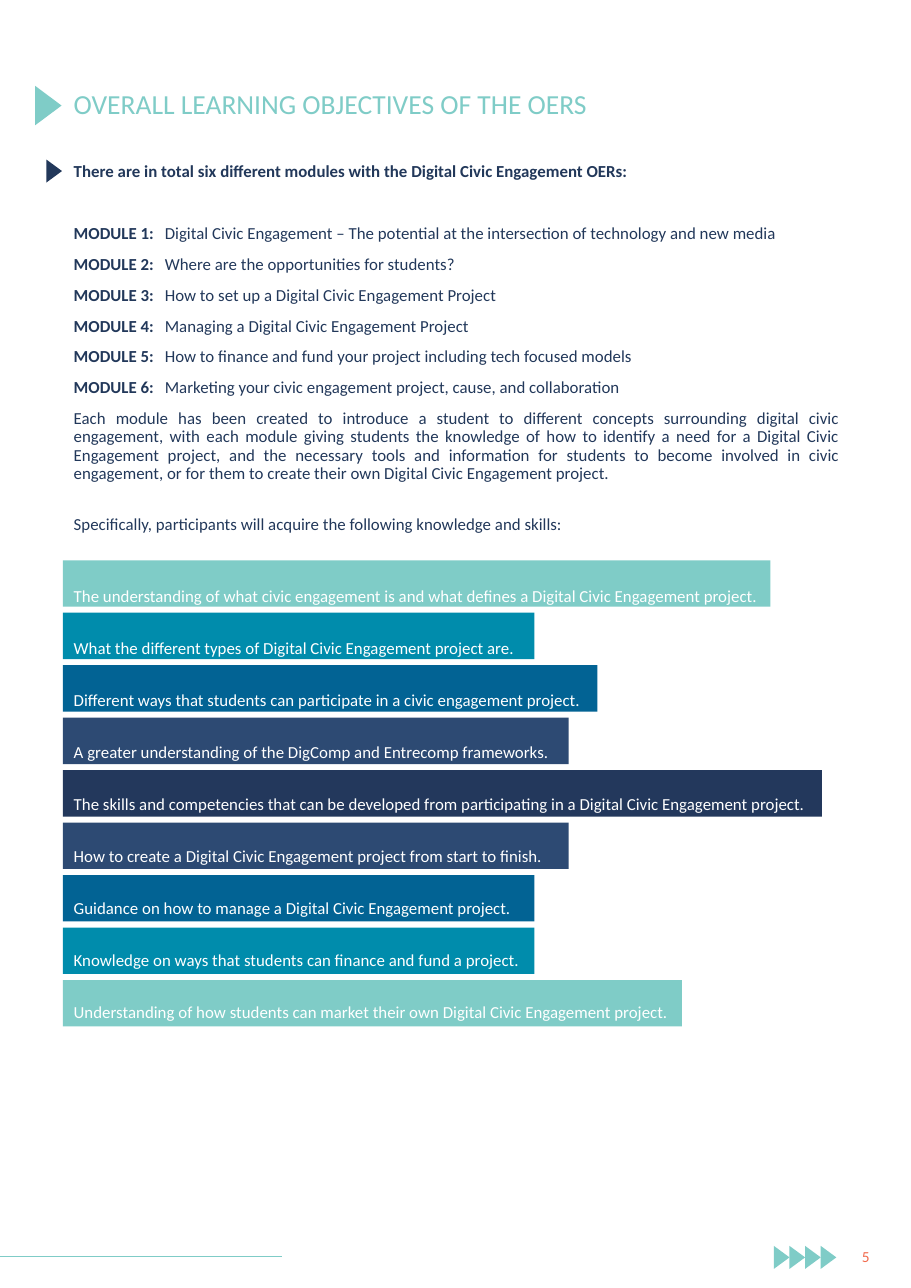
from dataclasses import dataclass, field
from typing import Any

from lxml.etree import SubElement
from pptx import Presentation
from pptx.dml.color import RGBColor
from pptx.enum.shapes import MSO_CONNECTOR as Connector, MSO_SHAPE as Shape
from pptx.enum.text import MSO_ANCHOR as Anchor, PP_ALIGN as Align
from pptx.oxml.ns import qn
from pptx.util import Cm, Pt


@dataclass(frozen=True)
class Theme:
    font: str = "Calibri"
    mint: str = "7FCCC7"
    teal: str = "008CAC"
    blue: str = "026394"
    slate: str = "2D4A73"
    navy: str = "23385C"
    ink: str = "22385A"
    coral: str = "F26B4D"
    white: str = "FFFFFF"
    title_size: float = 18
    body_size: float = 11
    page_size: float = 10


THEME = Theme()


@dataclass(frozen=True)
class Box:
    left: float
    top: float
    width: float
    height: float

    def lengths(self) -> tuple[Cm, ...]:
        return Cm(self.left), Cm(self.top), Cm(self.width), Cm(self.height)


@dataclass(frozen=True)
class Skill:
    text: str
    width: float
    color: str


@dataclass(frozen=True)
class Line:
    text: str
    lead: str = ""
    bold: bool = False
    size: float = THEME.body_size
    color: str = THEME.ink
    layout: dict[str, Any] = field(default_factory=dict)


PROSE = {"alignment": Align.JUSTIFY, "line_spacing": 0.9, "space_before": Pt(8.3)}
AFTER_GAP = PROSE | {"space_before": Pt(28.7)}
SKILLS_INTRO = PROSE | {"space_before": Pt(21.4)}
SKILL_LINE = {"alignment": Align.LEFT, "line_spacing": 2.5, "space_before": Pt(1)}
FIRST_SKILL_LINE = SKILL_LINE | {"space_before": Pt(14.1)}
HEADING = PROSE | {"alignment": Align.LEFT}

TEXT_LEFT, TEXT_WIDTH = 1.45, 18.16
MODULE_TAB = 2.1
BAR_TOP, BAR_HEIGHT, BAR_PITCH = 12.92, 1.07, 1.21
SMALL_ARROW = (0.36, 0.53)
FOOTER_ARROWS = 4

MODULES = [
    "Digital Civic Engagement – The potential at the intersection of technology and new media",
    "Where are the opportunities for students?",
    "How to set up a Digital Civic Engagement Project",
    "Managing a Digital Civic Engagement Project",
    "How to finance and fund your project including tech focused models",
    "Marketing your civic engagement project, cause, and collaboration",
]
SUMMARY = (
    "Each module has been created to introduce a student to different concepts surrounding "
    "digital civic engagement, with each module giving students the knowledge of how to "
    "identify a need for a Digital Civic Engagement project, and the necessary tools and "
    "information for students to become involved in civic engagement, or for them to create "
    "their own Digital Civic Engagement project."
)
SKILLS = [
    Skill("The understanding of what civic engagement is and what defines a "
          "Digital Civic Engagement project.", 16.31, THEME.mint),
    Skill("What the different types of Digital Civic Engagement project are.",
          10.87, THEME.teal),
    Skill("Different ways that students can participate in a civic engagement project.",
          12.32, THEME.blue),
    Skill("A greater understanding of the DigComp and Entrecomp frameworks.",
          11.66, THEME.slate),
    Skill("The skills and competencies that can be developed from participating in a "
          "Digital Civic Engagement project.", 17.5, THEME.navy),
    Skill("How to create a Digital Civic Engagement project from start to finish.",
          11.66, THEME.slate),
    Skill("Guidance on how to manage a Digital Civic Engagement project.",
          10.87, THEME.blue),
    Skill("Knowledge on ways that students can finance and fund a project.",
          10.87, THEME.teal),
    Skill("Understanding of how students can market their own "
          "Digital Civic Engagement project.", 14.27, THEME.mint),
]


def apply(target: Any, values: dict[str, Any]) -> None:
    for name, value in values.items():
        setattr(target, name, value)


def paint(shape: Any, color: str) -> None:
    shape.shadow.inherit = False
    shape.fill.solid()
    shape.fill.fore_color.rgb = RGBColor.from_string(color)
    shape.line.fill.background()


def add_bar(slide: Any, box: Box, color: str) -> None:
    paint(slide.shapes.add_shape(Shape.RECTANGLE, *box.lengths()), color)


def add_arrow(slide: Any, box: Box, color: str) -> None:
    left, top, width, height = box.lengths()
    outline = slide.shapes.build_freeform(left + width, top + height // 2)
    outline.add_line_segments([(left, top), (left, top + height)], close=True)
    paint(outline.convert_to_shape(), color)


def add_run(paragraph: Any, text: str, line: Line, bold: bool) -> None:
    run = paragraph.add_run()
    run.text = text
    apply(run.font, {"name": THEME.font, "size": Pt(line.size), "bold": bold})
    run.font.color.rgb = RGBColor.from_string(line.color)


def add_text(slide: Any, box: Box, lines: list[Line], anchor: Anchor = Anchor.TOP) -> None:
    frame = slide.shapes.add_textbox(*box.lengths()).text_frame
    apply(frame, {"word_wrap": True, "vertical_anchor": anchor})
    for index, line in enumerate(lines):
        paragraph = frame.add_paragraph() if index else frame.paragraphs[0]
        apply(paragraph, line.layout)
        if line.lead:
            tabs = SubElement(paragraph._p.get_or_add_pPr(), qn("a:tabLst"))
            SubElement(tabs, qn("a:tab"), pos=str(Cm(MODULE_TAB)), algn="l")
            add_run(paragraph, line.lead + "\t", line, True)
        add_run(paragraph, line.text, line, line.bold)


def add_footer(slide: Any) -> None:
    rule = slide.shapes.add_connector(
        Connector.STRAIGHT, Cm(0), Cm(28.98), Cm(6.5), Cm(28.98))
    rule.line.width = Pt(0.75)
    rule.line.color.rgb = RGBColor.from_string(THEME.mint)
    SubElement(rule._element.spPr, qn("a:effectLst"))
    page = Line("5", size=THEME.page_size, color=THEME.coral,
                layout={"alignment": Align.CENTER})
    add_text(slide, Box(19.46, 28.6, 0.99, 0.74), [page], Anchor.MIDDLE)
    for index in range(FOOTER_ARROWS):
        add_arrow(slide, Box(17.84 + index * SMALL_ARROW[0], 28.73, *SMALL_ARROW), THEME.mint)


def body_lines() -> list[Line]:
    lines = [Line("There are in total six different modules with the "
                  "Digital Civic Engagement OERs:", bold=True, layout=PROSE)]
    for number, module in enumerate(MODULES, start=1):
        layout = AFTER_GAP if number == 1 else PROSE
        lines.append(Line(module, lead=f"MODULE {number}:", layout=layout))
    lines.append(Line(SUMMARY, layout=PROSE))
    lines.append(Line("Specifically, participants will acquire the following "
                      "knowledge and skills:", layout=SKILLS_INTRO))
    for index, skill in enumerate(SKILLS):
        layout = SKILL_LINE if index else FIRST_SKILL_LINE
        lines.append(Line(skill.text, color=THEME.white, layout=layout))
    return lines


def main() -> None:
    deck = Presentation()
    apply(deck, {"slide_width": Cm(21), "slide_height": Cm(29.7)})
    slide = deck.slides.add_slide(deck.slide_layouts[6])

    # Footer with rule, page number and arrows
    add_footer(slide)

    # Coloured bars behind the skills
    for index, skill in enumerate(SKILLS):
        top = BAR_TOP + index * BAR_PITCH
        add_bar(slide, Box(TEXT_LEFT, top, skill.width, BAR_HEIGHT), skill.color)

    # Heading and its arrow
    heading = Line("OVERALL LEARNING OBJECTIVES OF THE OERS", size=THEME.title_size,
                   color=THEME.mint, layout=HEADING)
    add_text(slide, Box(TEXT_LEFT, 1.55, TEXT_WIDTH, 1.78), [heading], Anchor.MIDDLE)
    add_arrow(slide, Box(0.81, 1.98, 0.61, 0.91), THEME.mint)

    # Modules, summary and skills
    add_arrow(slide, Box(1.07, 3.68, *SMALL_ARROW), THEME.ink)
    add_text(slide, Box(TEXT_LEFT, 3.63, TEXT_WIDTH, 24.49), body_lines())

    deck.save("out.pptx")


if __name__ == "__main__":
    main()
